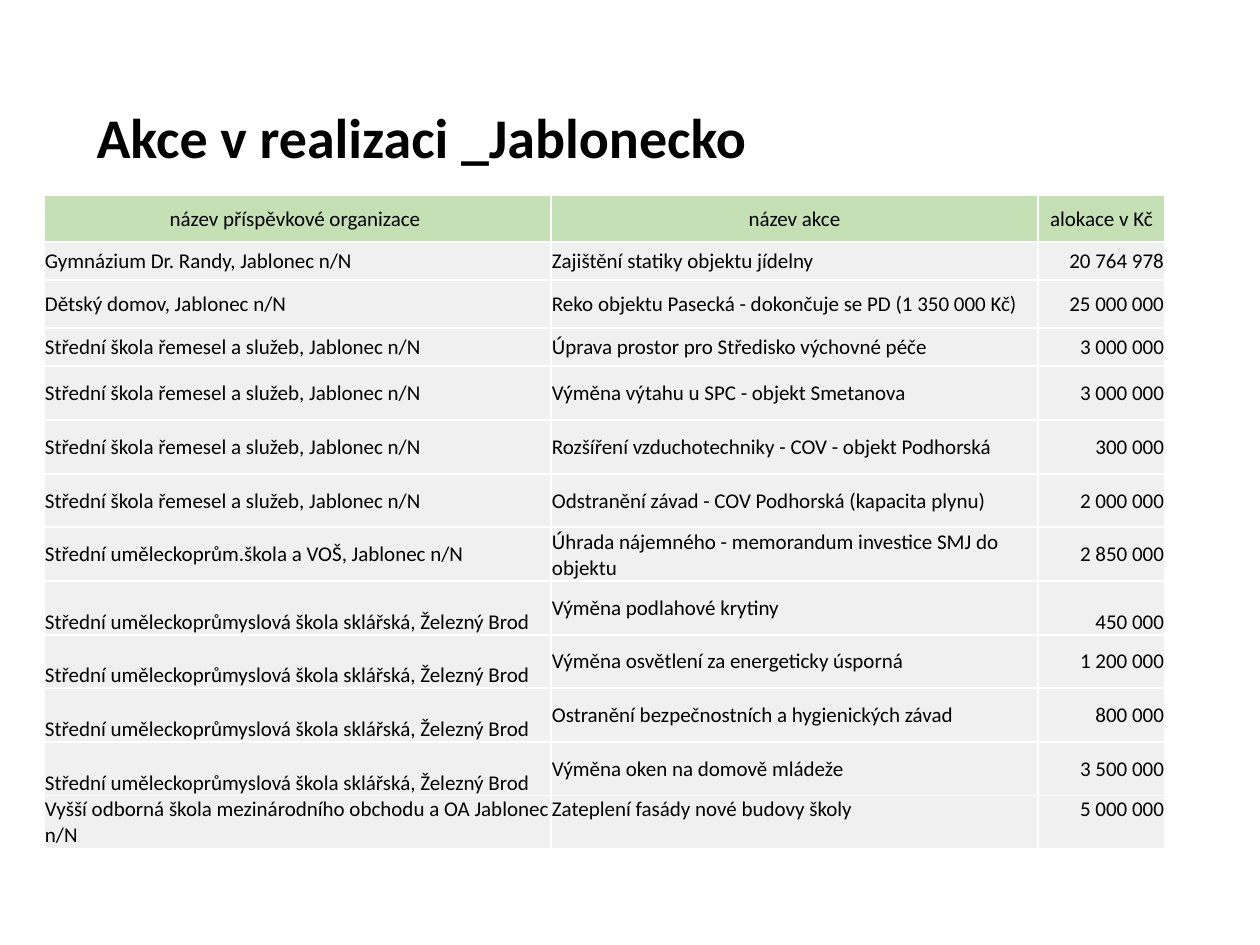
from lxml import etree
from pptx import Presentation, util as u
from pptx.dml.color import RGBColor
from pptx.enum import text
from pptx.oxml.ns import qn

# Content: organisation, project, allocation, vertical anchor of each cell
TITLE = "Akce v realizaci _Jablonecko"
HEADER = ("název příspěvkové organizace ", "název akce", "alokace v Kč", "mmm")
CRAFTS = "Střední škola řemesel a služeb, Jablonec n/N"
GLASS = "Střední uměleckoprůmyslová škola sklářská, Železný Brod"
PROJECTS = [
    ("Gymnázium Dr. Randy, Jablonec n/N", "Zajištění statiky objektu jídelny", "20 764 978", "mmm"),
    ("Dětský domov, Jablonec n/N", "Reko objektu Pasecká - dokončuje se PD (1 350 000 Kč)",
     "25 000 000", "mmm"),
    (CRAFTS, "Úprava prostor pro Středisko výchovné péče", "3 000 000", "mmm"),
    (CRAFTS, "Výměna výtahu u SPC - objekt Smetanova", "3 000 000", "mmm"),
    (CRAFTS, "Rozšíření vzduchotechniky - COV - objekt Podhorská", "300 000", "mmm"),
    (CRAFTS, "Odstranění závad - COV Podhorská (kapacita plynu)", "2 000 000", "mmm"),
    ("Střední uměleckoprům.škola a VOŠ, Jablonec n/N",
     "Úhrada nájemného - memorandum investice SMJ do objektu", "2 850 000", "mbm"),
    (GLASS, "Výměna podlahové krytiny", "450 000", "bmb"),
    (GLASS, "Výměna osvětlení za energeticky úsporná", "1 200 000", "bmm"),
    (GLASS, "Ostranění bezpečnostních a hygienických závad", "800 000", "bmm"),
    (GLASS, "Výměna oken na domově mládeže", "3 500 000", "bmm"),
    ("Vyšší odborná škola mezinárodního obchodu a OA Jablonec n/N",
     "Zateplení fasády nové budovy školy", "5 000 000", "ttt"),
]

# Style and measures in px
COLORS = {"text": "000000", "header": "C5E0B4", "body": "F0F0F0", "border": "FFFFFF"}
FONT = "Calibri"
COL_WIDTHS = [507, 487, 127]
ROW_HEIGHTS = [47, 38, 48, 38] + [54, 54, 53] * 3
ANCHORS = {"t": text.MSO_ANCHOR.TOP, "m": text.MSO_ANCHOR.MIDDLE, "b": text.MSO_ANCHOR.BOTTOM}
ALIGN = text.PP_ALIGN
BODY_ALIGNS = (ALIGN.LEFT, ALIGN.LEFT, ALIGN.RIGHT)


def px(n):
    return u.Emu(round(n * 914400 / 126))


def add_run(p, words, size, bold=False):
    r = p.add_run()
    r.text = words
    r.font.name, r.font.size, r.font.bold = FONT, u.Pt(size), bold
    r.font.color.rgb = RGBColor.from_string(COLORS["text"])


def add_borders(cell):
    props = cell._tc.get_or_add_tcPr()
    for i, side in enumerate(("lnL", "lnR", "lnT", "lnB")):
        line = etree.Element(qn(f"a:{side}"), w=str(u.Pt(1)))
        fill = etree.SubElement(line, qn("a:solidFill"))
        etree.SubElement(fill, qn("a:srgbClr"), val=COLORS["border"])
        props.insert(i, line)


def fill_cell(cell, words, anchor, align, color):
    cell.margin_left = cell.margin_right = cell.margin_top = px(1)
    cell.margin_bottom = 0
    cell.vertical_anchor = ANCHORS[anchor]
    cell.fill.solid()
    cell.fill.fore_color.rgb = RGBColor.from_string(COLORS[color])
    add_borders(cell)
    p = cell.text_frame.paragraphs[0]
    p.alignment = align
    add_run(p, words, 12)


prs = Presentation()
prs.slide_width, prs.slide_height = px(1260), px(945)
s = prs.slides.add_slide(prs.slide_layouts[5])

# Title
title = s.shapes.title
title.left, title.top, title.width, title.height = px(84), px(96), px(1052), px(81)
tf = title.text_frame
tf.word_wrap = True
tf.auto_size = text.MSO_AUTO_SIZE.NONE
tf.vertical_anchor = text.MSO_ANCHOR.MIDDLE
p = tf.paragraphs[0]
p.alignment = ALIGN.LEFT
add_run(p, TITLE, 32, bold=True)

# Table of projects
rows = [HEADER] + PROJECTS
table = s.shapes.add_table(len(rows), len(COL_WIDTHS), px(44), px(195),
                           px(sum(COL_WIDTHS)), px(sum(ROW_HEIGHTS))).table
for column, width in zip(table.columns, COL_WIDTHS):
    column.width = px(width)
for i, (*words, anchors) in enumerate(rows):
    table.rows[i].height = px(ROW_HEIGHTS[i])
    aligns = BODY_ALIGNS if i else [ALIGN.CENTER] * 3
    for j, cell in enumerate(table.rows[i].cells):
        fill_cell(cell, words[j], anchors[j], aligns[j], "body" if i else "header")

prs.save("out.pptx")
